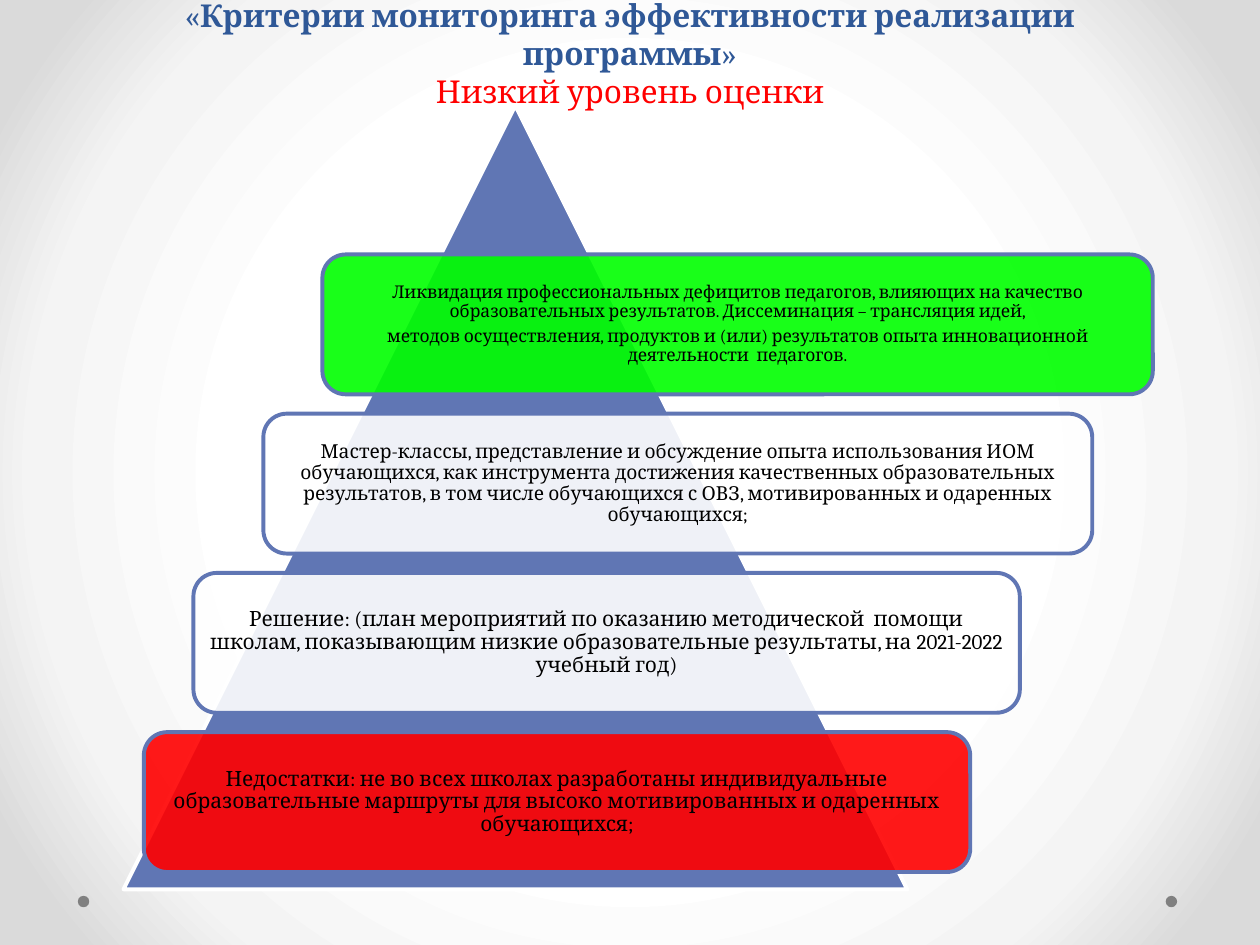
"""Build the slide on monitoring criteria with a pyramid of four assessment steps."""
from lxml.etree import SubElement
from pptx import Presentation
from pptx.dml.color import RGBColor
from pptx.enum.shapes import MSO_SHAPE as Shape
from pptx.enum.text import MSO_ANCHOR as Anchor, MSO_AUTO_SIZE as AutoSize, PP_ALIGN as Align
from pptx.oxml import parse_xml
from pptx.oxml.ns import nsdecls, qn
from pptx.util import Cm, Pt

FONT = "Cambria"
COLORS = {
    "title": "2F5897", "blue": "6076B4", "gray": "808080", "black": "000000",
    "white": "FFFFFF", "red": "FF0000", "green": "00FF00",
    "light": "F4F4F4", "edge": "DADADA",
}
STEPS = [
    (6.5, 16.74, "green", 10, 0.1, [
        "Ликвидация профессиональных дефицитов педагогов, влияющих на качество "
        "образовательных результатов. Диссеминация – трансляция идей,",
        "методов осуществления, продуктов и (или) результатов опыта инновационной "
        "деятельности  педагогов."]),
    (5.31, 16.71, "white", 11, 0.13, [
        "Мастер-классы, представление и обсуждение опыта использования ИОМ "
        "обучающихся, как инструмента достижения качественных образовательных "
        "результатов, в том числе обучающихся с ОВЗ, мотивированных и одаренных "
        "обучающихся;"]),
    (3.9, 16.66, "white", 12, 0.13, [
        "Решение: (план мероприятий по оказанию методической  помощи школам, "
        "показывающим низкие образовательные результаты, на 2021-2022 учебный год)"]),
    (2.9, 16.66, "red", 12, 0.13, [
        "Недостатки: не во всех школах разработаны индивидуальные образовательные "
        "маршруты для высоко мотивированных и одаренных обучающихся;"]),
]


def color(name):
    return RGBColor.from_string(COLORS[name])


def add_filled_shape(slide, kind, left, top, width, height, fill, line=None):
    shape = slide.shapes.add_shape(kind, Cm(left), Cm(top), Cm(width), Cm(height))
    shape.shadow.inherit = False
    shape.fill.solid()
    shape.fill.fore_color.rgb = color(fill)
    if line:
        shape.line.color.rgb = color(line)
        shape.line.width = Pt(2.25)
    else:
        shape.line.fill.background()
    return shape


presentation = Presentation()
presentation.slide_width, presentation.slide_height = Cm(25.4), Cm(19.05)
slide = presentation.slides.add_slide(presentation.slide_layouts[5])

stops = "".join(
    f'<a:gs pos="{position}000"><a:srgbClr val="{COLORS[name]}"/></a:gs>'
    for position, name in [(50, "white"), (76, "light"), (92, "edge")])
slide.background.fill.solid()
background = slide.element.find(".//" + qn("p:bgPr"))
background.replace(background[0], parse_xml(
    f'<a:gradFill {nsdecls("a")} rotWithShape="1"><a:gsLst>{stops}</a:gsLst>'
    '<a:path path="circle"><a:fillToRect l="50000" t="50000" r="50000" b="50000"/>'
    '</a:path></a:gradFill>'))

for left in (23.5, 1.57):
    add_filled_shape(slide, Shape.OVAL, left, 18.06, 0.23, 0.23, "gray")

title = slide.shapes.title
title.left, title.top, title.width, title.height = Cm(1.27), Cm(0.33), Cm(22.86), Cm(2.01)
title_frame = title.text_frame
title_frame.auto_size = AutoSize.NONE
title_frame.vertical_anchor = Anchor.BOTTOM
paragraph = title_frame.paragraphs[0]
paragraph.alignment = Align.CENTER
paragraph.font.name, paragraph.font.size = FONT, Pt(18)
for text, bold, name in [
    ("«", False, "title"),
    ("Критерии мониторинга эффективности реализации программы", True, "title"),
    ("»", False, "title"),
    ("Низкий уровень оценки", False, "red"),
]:
    if name == "red":
        paragraph.add_line_break()
    run = paragraph.add_run()
    run.text = text
    run.font.bold = bold
    run.font.color.rgb = color(name)

add_filled_shape(slide, Shape.ISOSCELES_TRIANGLE, 2.49, 2.13, 15.8, 15.8, "blue", "white")

for index, (left, width, fill, size, inset, texts) in reversed(list(enumerate(STEPS))):
    step = add_filled_shape(slide, Shape.ROUNDED_RECTANGLE,
                            left, 5.13 + 3.21 * index, width, 2.82, fill, "blue")
    fill_color = step.element.spPr.find(qn("a:solidFill"))[0]
    SubElement(fill_color, qn("a:alpha")).set("val", "90000")
    frame = step.text_frame
    frame.word_wrap = True
    frame.vertical_anchor = Anchor.MIDDLE
    frame.margin_left = frame.margin_right = Cm(inset)
    frame.margin_top = frame.margin_bottom = Cm(inset)
    frame.text = "\n".join(texts)
    for paragraph in frame.paragraphs:
        paragraph.alignment = Align.CENTER
        paragraph.line_spacing = 0.9
        paragraph.space_after = Pt(4)
        paragraph.font.name, paragraph.font.size = FONT, Pt(size)
        paragraph.font.color.rgb = color("black")

presentation.save("out.pptx")
